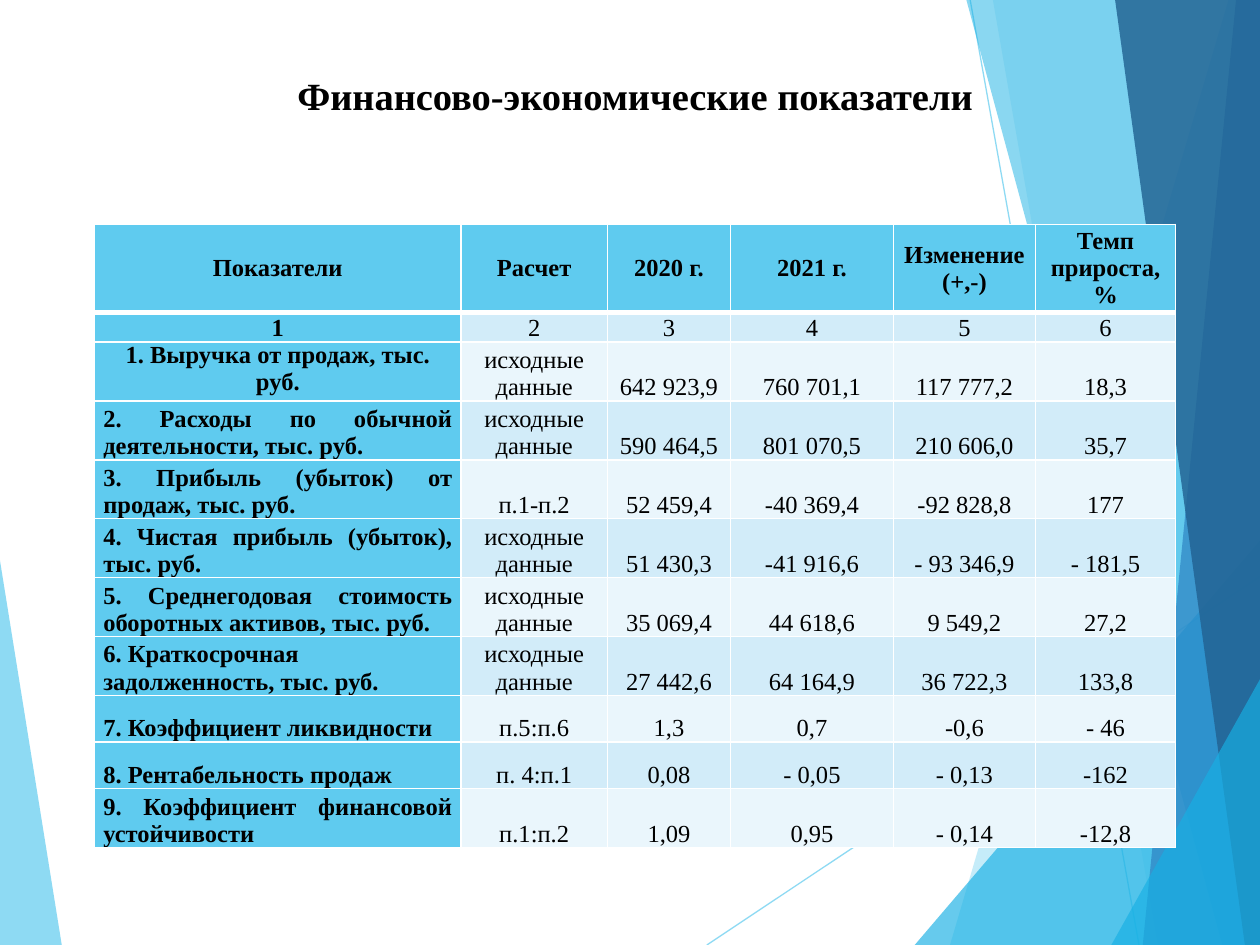
from lxml.etree import SubElement
from pptx import Presentation
from pptx.dml.color import RGBColor
from pptx.enum.shapes import MSO_CONNECTOR
from pptx.enum.text import MSO_ANCHOR, PP_ALIGN
from pptx.oxml.ns import qn
from pptx.util import Inches, Pt

WHITE = RGBColor(0xFF, 0xFF, 0xFF)
BLACK = RGBColor(0, 0, 0)
SKY = RGBColor(0x5F, 0xCB, 0xEF)
CYAN = RGBColor(0x17, 0xB0, 0xE4)
BLUE = RGBColor(0x2E, 0x83, 0xC3)
NAVY = RGBColor(0x22, 0x62, 0x92)
LIGHT = RGBColor(0xD2, 0xEC, 0xF9)
PALE = RGBColor(0xEA, 0xF6, 0xFC)
FONT = "Times New Roman"

LEFT = (SKY, 70, [(0, 4.45), (0.49, 7.5), (0, 7.5)])
RAYS = [((5.61, 7.5), (10.01, 4.57)), ((7.7, 0), (9.04, 7.5))]
FACETS = [
    (SKY, 36, [(9.75, 0), (7.54, 7.5), (10, 7.5), (10, 0)]),
    (SKY, 20, [(7.88, 0), (9.19, 7.5), (10, 7.5), (10, 0)]),
    (CYAN, 66, [(7.26, 7.5), (10, 4.29), (10, 7.5)]),
    (CYAN, 50, [(7.67, 0), (9.7, 7.5), (10, 7.5), (10, 0)]),
    (BLUE, 70, [(9.81, 0), (9.07, 7.5), (10, 7.5), (10, 0)]),
    (NAVY, 82, [(8.85, 0), (9.88, 7.5), (10, 7.5), (10, 0)]),
    (CYAN, 66, [(8.82, 7.5), (10, 5.39), (10, 7.5)]),
]

COLS = [2.91, 1.16, 0.98, 1.29, 1.13, 1.11]
ROWS = [0.65, 0.21] + [0.43] * 5 + [0.45, 0.37, 0.37, 0.43]
BASE = "исходные данные"
DATA = [
    ["Показатели", "Расчет", "2020 г.", "2021 г.", "Изменение (+,-)", "Темп прироста,%"],
    ["1", "2", "3", "4", "5", "6"],
    ["1. Выручка от продаж, тыс. руб.", BASE, "642 923,9", "760 701,1", "117 777,2", "18,3"],
    ["2. Расходы по обычной деятельности, тыс. руб.", BASE,
     "590 464,5", "801 070,5", "210 606,0", "35,7"],
    ["3. Прибыль (убыток) от продаж, тыс. руб.", "п.1-п.2",
     "52 459,4", "-40 369,4", "-92 828,8", "177"],
    ["4. Чистая прибыль (убыток), тыс. руб.", BASE,
     "51 430,3", "-41 916,6", "- 93 346,9", "- 181,5"],
    ["5. Среднегодовая стоимость оборотных активов, тыс. руб.", BASE,
     "35 069,4", "44 618,6", "9 549,2", "27,2"],
    ["6. Краткосрочная задолженность, тыс. руб.", BASE,
     "27 442,6", "64 164,9", "36 722,3", "133,8"],
    ["7. Коэффициент ликвидности", "п.5:п.6", "1,3", "0,7", "-0,6", "- 46"],
    ["8. Рентабельность продаж", "п. 4:п.1", "0,08", "- 0,05", "- 0,13", "-162"],
    ["9. Коэффициент финансовой устойчивости", "п.1:п.2", "1,09", "0,95", "- 0,14", "-12,8"],
]


def fade(shape, alpha):
    for color in shape.element.iter(qn("a:srgbClr")):
        SubElement(color, qn("a:alpha")).set("val", str(alpha * 1000))


def add_facet(slide, left, top, color, alpha, points):
    spots = [(left + Inches(x), top + Inches(y)) for x, y in points]
    pen = slide.shapes.build_freeform(*spots[0])
    pen.add_line_segments(spots[1:], close=True)
    shape = pen.convert_to_shape()
    shape.shadow.inherit = False
    shape.fill.solid()
    shape.fill.fore_color.rgb = color
    shape.line.fill.background()
    fade(shape, alpha)


def add_ray(slide, left, top, start, end):
    ray = slide.shapes.add_connector(
        MSO_CONNECTOR.STRAIGHT, left + Inches(start[0]), top + Inches(start[1]),
        left + Inches(end[0]), top + Inches(end[1]))
    ray.line.color.rgb = SKY
    ray.line.width = Pt(0.75)
    fade(ray, 70)
    SubElement(ray.element.spPr, qn("a:effectLst"))


def add_backdrop(slide, left, top):
    add_facet(slide, left, top, *LEFT)
    for start, end in RAYS:
        add_ray(slide, left, top, start, end)
    for facet in FACETS:
        add_facet(slide, left, top, *facet)


def set_font(para, size, bold):
    para.font.name = FONT
    para.font.size = Pt(size)
    para.font.bold = bold
    para.font.color.rgb = BLACK


def add_title(slide, left, top, width, height):
    frame = slide.shapes.add_textbox(left, top, width, height).text_frame
    frame.word_wrap = True
    frame.vertical_anchor = MSO_ANCHOR.TOP
    para = frame.paragraphs[0]
    para.text = "Финансово-экономические показатели"
    para.alignment = PP_ALIGN.CENTER
    set_font(para, 22, True)


def set_edges(cell, head):
    props = cell._tc.get_or_add_tcPr()
    for spot, side in enumerate(("lnL", "lnR", "lnT", "lnB")):
        width = Pt(3 if head and side == "lnB" else 1)
        edge = props.makeelement(qn("a:" + side), {"w": str(width)})
        fill = SubElement(edge, qn("a:solidFill"))
        SubElement(fill, qn("a:srgbClr")).set("val", str(WHITE))
        props.insert(spot, edge)


def get_align(row, col):
    if col or row < 3:
        return PP_ALIGN.CENTER
    return PP_ALIGN.LEFT if row == 7 else PP_ALIGN.JUSTIFY


def get_anchor(row, col):
    if row == 0:
        return MSO_ANCHOR.MIDDLE
    return MSO_ANCHOR.TOP if (row, col) == (2, 0) else MSO_ANCHOR.BOTTOM


def fill_cell(cell, text, row, col):
    strong = row == 0 or col == 0
    cell.margin_left = cell.margin_right = Inches(0.07)
    cell.margin_top = cell.margin_bottom = 0
    cell.vertical_anchor = get_anchor(row, col)
    cell.fill.solid()
    cell.fill.fore_color.rgb = SKY if strong else LIGHT if row % 2 else PALE
    set_edges(cell, row == 0)
    para = cell.text_frame.paragraphs[0]
    para.text = text
    para.alignment = get_align(row, col)
    para.line_spacing = 1.0
    set_font(para, 14, strong)


def add_grid(slide, left, top, width, height):
    table = slide.shapes.add_table(len(ROWS), len(COLS), left, top, width, height).table
    for col, size in enumerate(COLS):
        table.columns[col].width = Inches(size)
    for row, size in enumerate(ROWS):
        table.rows[row].height = Inches(size)
        for col, text in enumerate(DATA[row]):
            fill_cell(table.cell(row, col), text, row, col)


def main():
    deck = Presentation()
    deck.slide_width = Inches(10)
    deck.slide_height = Inches(7.5)
    slide = deck.slides.add_slide(deck.slide_layouts[6])
    add_backdrop(slide, Inches(0), Inches(0))
    add_title(slide, Inches(0.75), Inches(0.52), Inches(8.58), Inches(0.87))
    add_grid(slide, Inches(0.75), Inches(1.78), Inches(8.58), Inches(sum(ROWS)))
    deck.save("out.pptx")


if __name__ == "__main__":
    main()
